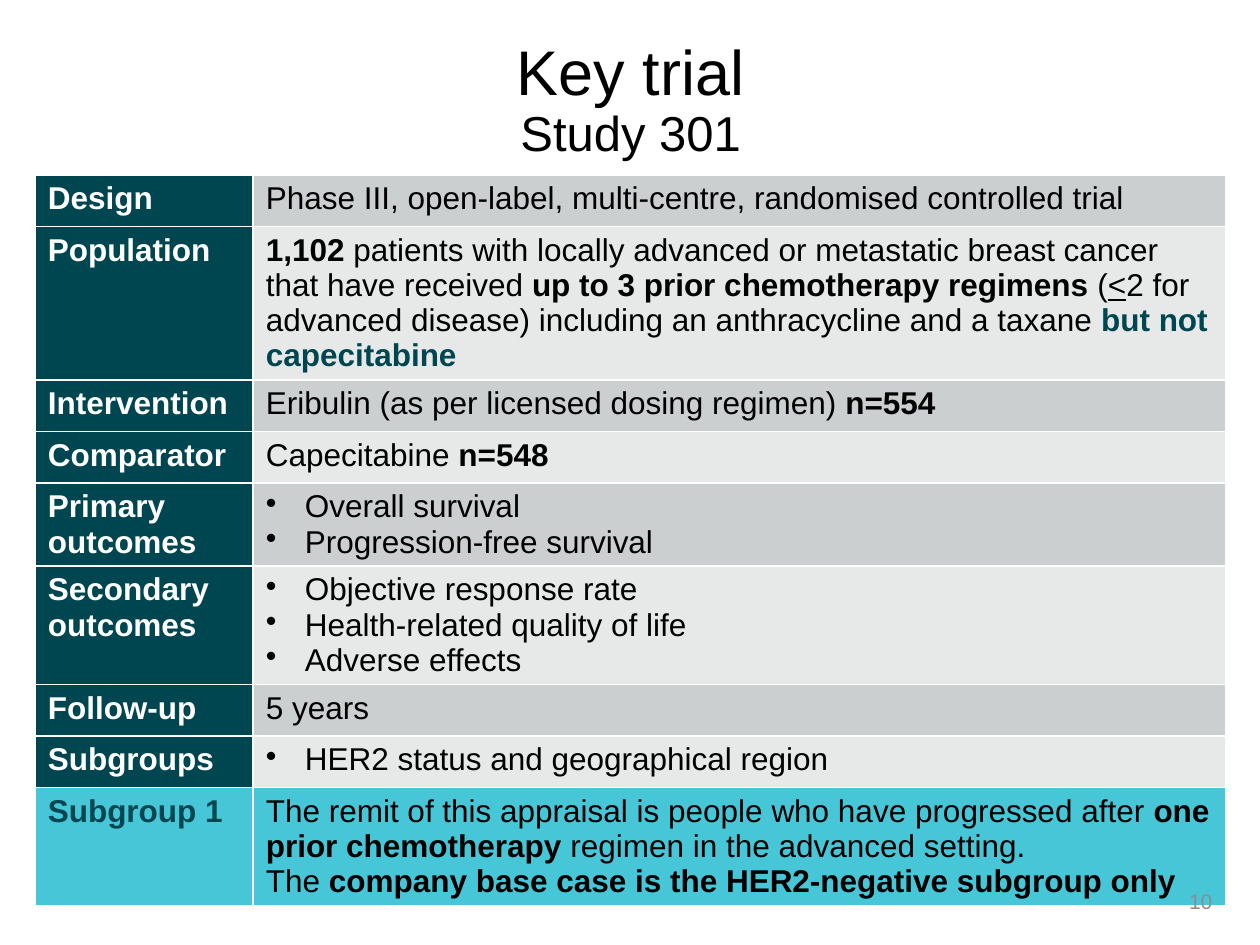
import pptx
import pptx.util
import pptx.dml.color
import pptx.enum.text
import pptx.oxml
import pptx.oxml.ns
import lxml.etree

WIDTH = pptx.util.Inches(10)
HEIGHT = pptx.util.Inches(7.5)
FONT = "Arial"
BLACK, WHITE, GREY = "000000", "FFFFFF", "8C8C8C"
TEAL, CYAN = "004650", "46C6D7"
BANDS = ["CCCFD0", "E7E9E9"]
ALIGN = pptx.enum.text.PP_ALIGN
MIDDLE = pptx.enum.text.MSO_ANCHOR.MIDDLE

ROWS = [
    ("Design", [["Phase III, open-label, multi-centre, randomised controlled trial"]]),
    ("Population", [[
        ("1,102", "bold"),
        " patients with locally advanced or metastatic breast cancer that have received ",
        ("up to 3 prior chemotherapy regimens ", "bold"),
        "(", ("<", "underline"),
        "2 for advanced disease) including an anthracycline and a taxane ",
        ("but not capecitabine", "accent"),
    ]]),
    ("Intervention", [["Eribulin (as per licensed dosing regimen) ", ("n=554", "bold")]]),
    ("Comparator", [["Capecitabine ", ("n=548", "bold")]]),
    ("Primary outcomes", [["Overall survival"], ["Progression-free survival"]]),
    ("Secondary outcomes", [
        ["Objective response rate"], ["Health-related quality of life"], ["Adverse effects"],
    ]),
    ("Follow-up", [["5 years"]]),
    ("Subgroups", [["HER2 status and geographical region"]]),
    ("Subgroup 1", [
        ["The remit of this appraisal is people who have progressed after ",
         ("one prior chemotherapy", "bold"), " regimen in the advanced setting."],
        ["The ", ("company base case is the HER2-negative subgroup only", "bold")],
    ]),
]
BULLETED = {"Primary outcomes", "Secondary outcomes", "Subgroups"}
HIGHLIGHTED = "Subgroup 1"


def color(value):
    return pptx.dml.color.RGBColor.from_string(value)


def share(left, top, width, height):
    return [round(part * side) for part, side in
            zip((left, top, width, height), (WIDTH, HEIGHT, WIDTH, HEIGHT))]


def set_font(font, size, value, bold=False):
    font.name = FONT
    font.size = pptx.util.Pt(size)
    font.color.rgb = color(value)
    font.bold = bold


def add_bullet(para):
    properties = para._p.get_or_add_pPr()
    indent = pptx.util.Inches(0.31)
    properties.set("marL", str(indent))
    properties.set("indent", str(-indent))
    bullet = lxml.etree.SubElement(properties, pptx.oxml.ns.qn("a:buChar"))
    bullet.set("char", "•")


def add_borders(cell):
    properties = cell._tc.get_or_add_tcPr()
    namespace = pptx.oxml.ns.nsdecls("a")
    for position, side in enumerate(("lnL", "lnR", "lnT", "lnB")):
        properties.insert(position, pptx.oxml.parse_xml(
            f'<a:{side} {namespace} w="12700"><a:solidFill>'
            f'<a:srgbClr val="{WHITE}"/></a:solidFill></a:{side}>'))


def fill_cell(cell, fill, paragraphs, value, bold=False, bulleted=False):
    cell.fill.solid()
    cell.fill.fore_color.rgb = color(fill)
    add_borders(cell)
    frame = cell.text_frame
    for number, pieces in enumerate(paragraphs):
        para = frame.add_paragraph() if number else frame.paragraphs[0]
        set_font(para.font, 18, value, bold)
        if bulleted:
            add_bullet(para)
        for piece in pieces:
            text, style = (piece, "") if isinstance(piece, str) else piece
            span = para.add_run()
            span.text = text
            set_font(span.font, 18, TEAL if style == "accent" else value,
                     bold or style in ("bold", "accent"))
            if style == "underline":
                span.font.underline = True


def place_title(page, box):
    title = page.shapes.title
    title.left, title.top, title.width, title.height = box
    frame = title.text_frame
    frame.auto_size = pptx.enum.text.MSO_AUTO_SIZE.NONE
    frame.vertical_anchor = MIDDLE
    para = frame.paragraphs[0]
    para.alignment = ALIGN.CENTER
    para.line_spacing = 0.9
    for text, size in (("Key trial", 36), ("Study 301", 28)):
        if para.runs:
            para.add_line_break()
        span = para.add_run()
        span.text = text
        set_font(span.font, size, BLACK)


def place_trial_table(page, box):
    left, top, width, height = box
    table = page.shapes.add_table(len(ROWS), 2, left, top, width, height).table
    table.first_row = False
    table.horz_banding = False
    label_width = pptx.util.Inches(1.73)
    table.columns[0].width = label_width
    table.columns[1].width = width - label_width
    for number, (label, paragraphs) in enumerate(ROWS):
        highlighted = label == HIGHLIGHTED
        label_fill, label_color = (CYAN, TEAL) if highlighted else (TEAL, WHITE)
        fill_cell(table.cell(number, 0), label_fill, [[label]], label_color, bold=True)
        fill_cell(table.cell(number, 1), CYAN if highlighted else BANDS[number % 2],
                  paragraphs, BLACK, bulleted=label in BULLETED)


def place_page_number(page, box):
    frame = page.shapes.add_textbox(*box).text_frame
    frame.word_wrap = True
    frame.vertical_anchor = MIDDLE
    para = frame.paragraphs[0]
    para.text = "10"
    para.alignment = ALIGN.RIGHT
    set_font(para.font, 12, GREY)


def main():
    deck = pptx.Presentation()
    deck.slide_width, deck.slide_height = WIDTH, HEIGHT
    page = deck.slides.add_slide(deck.slide_layouts[5])
    place_title(page, share(0.028, 0.039, 0.945, 0.137))
    place_trial_table(page, share(0.028, 0.185, 0.945, 0.49))
    place_page_number(page, share(0.747, 0.927, 0.225, 0.053))
    deck.save("out.pptx")


if __name__ == "__main__":
    main()
